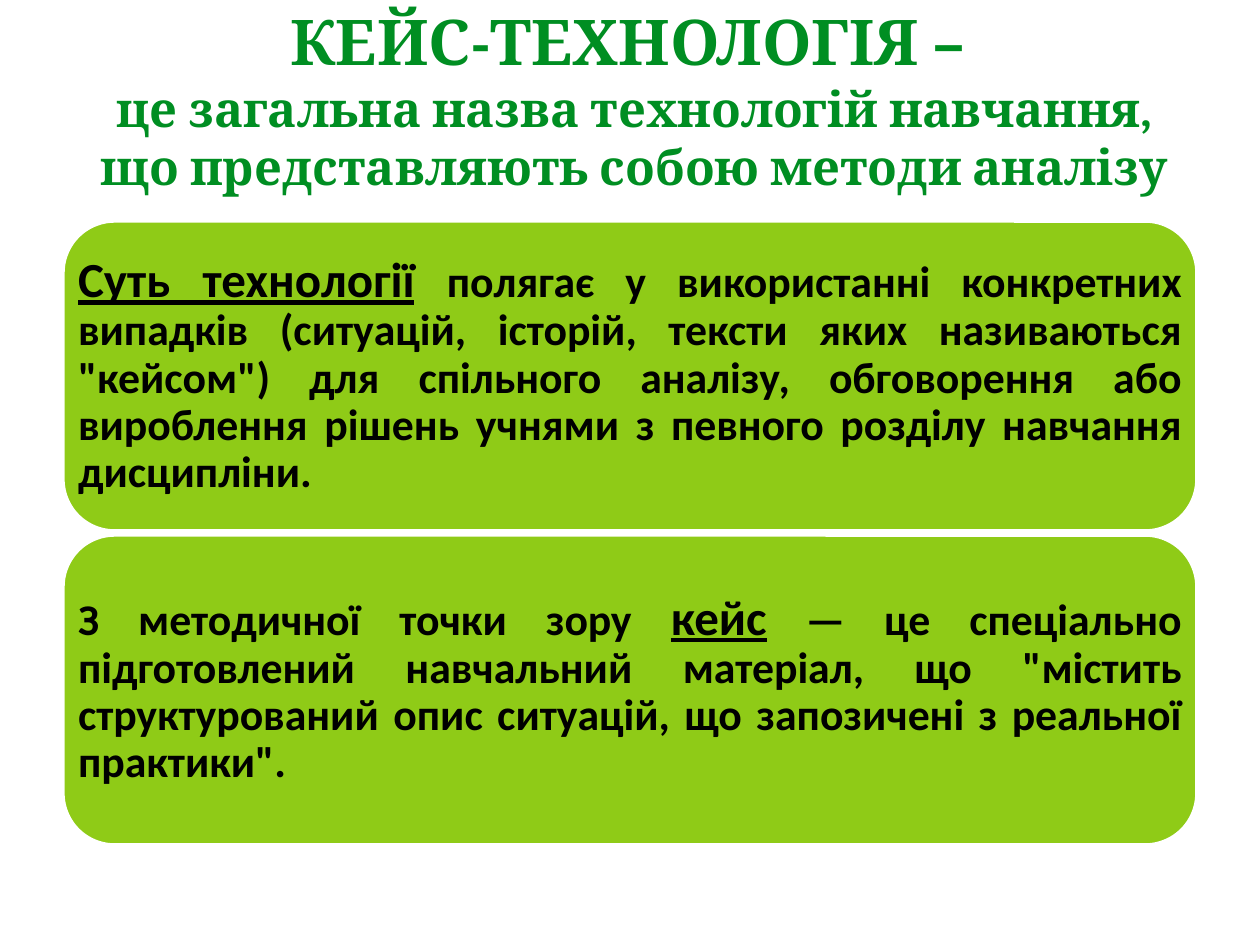
from dataclasses import dataclass

from pptx import Presentation
from pptx.dml.color import RGBColor
from pptx.enum.shapes import MSO_SHAPE
from pptx.enum.text import MSO_ANCHOR, PP_ALIGN
from pptx.util import Emu, Pt

PX_PER_INCH = 126
GREEN, LIME, BLACK, WHITE = "008E22", "8FCB17", "000000", "FFFFFF"


@dataclass
class Phrase:
    text: str
    size: float
    underline: bool = False


@dataclass
class Card:
    phrases: list[Phrase]


TITLE = [
    Phrase("КЕЙС-ТЕХНОЛОГІЯ – \v", 36),
    Phrase(" це загальна назва технологій навчання, \v"
           "що представляють собою методи аналізу", 27.9),
]
CARDS = [
    Card([
        Phrase("Суть технології", 28, True),
        Phrase(" ", 28),
        Phrase("полягає у використанні конкретних випадків (ситуацій, історій, "
               "тексти яких називаються \"кейсом\") для спільного аналізу, "
               "обговорення або вироблення рішень учнями з певного розділу "
               "навчання дисципліни.", 25),
    ]),
    Card([
        Phrase("З методичної точки зору ", 25),
        Phrase("кейс", 28, True),
        Phrase(" — це спеціально підготовлений навчальний матеріал, що "
               "\"містить структурований опис ситуацій, що запозичені з "
               "реальної практики\".", 25),
    ]),
]
CARD_LEFT, CARD_TOP, CARD_WIDTH, CARD_HEIGHT, CARD_GAP = 63, 221, 1134, 310, 4


def px(n: int) -> Emu:
    return Emu(round(n * 914400 / PX_PER_INCH))


def rgb(color: str) -> RGBColor:
    return RGBColor.from_string(color)


def add_phrases(p, phrases: list[Phrase], font: str, color: str) -> None:
    """Append bold runs; a vertical tab in a phrase becomes a line break."""
    for phrase in phrases:
        for i, line in enumerate(phrase.text.split("\v")):
            if i:
                p.add_line_break()
            if not line:
                continue
            r = p.add_run()
            r.text = line
            r.font.name = font
            r.font.size = Pt(phrase.size)
            r.font.bold = True
            r.font.underline = phrase.underline
            r.font.color.rgb = rgb(color)


def add_title(s) -> None:
    tf = s.shapes.add_textbox(px(29), px(20), px(1211), px(158)).text_frame
    tf.word_wrap = True
    tf.vertical_anchor = MSO_ANCHOR.MIDDLE
    p = tf.paragraphs[0]
    p.alignment = PP_ALIGN.CENTER
    add_phrases(p, TITLE, "Cambria", GREEN)


def add_card(s, card: Card, top: int) -> None:
    sp = s.shapes.add_shape(MSO_SHAPE.ROUNDED_RECTANGLE, px(CARD_LEFT), px(top),
                            px(CARD_WIDTH), px(CARD_HEIGHT))
    sp.shadow.inherit = False
    sp.fill.solid()
    sp.fill.fore_color.rgb = rgb(LIME)
    sp.line.color.rgb = rgb(WHITE)
    sp.line.width = Pt(2)
    tf = sp.text_frame
    tf.word_wrap = True
    tf.vertical_anchor = MSO_ANCHOR.MIDDLE
    # The rounded corners already keep the text off the edge.
    tf.margin_left = tf.margin_right = tf.margin_top = tf.margin_bottom = 0
    p = tf.paragraphs[0]
    p.alignment = PP_ALIGN.JUSTIFY
    p.line_spacing = 0.9
    add_phrases(p, card.phrases, "Calibri", BLACK)


def main() -> None:
    prs = Presentation()
    prs.slide_width, prs.slide_height = px(1260), px(945)
    s = prs.slides.add_slide(prs.slide_layouts[6])
    add_title(s)
    for i, card in enumerate(CARDS):
        add_card(s, card, CARD_TOP + i * (CARD_HEIGHT + CARD_GAP))
    prs.save("out.pptx")


if __name__ == "__main__":
    main()
